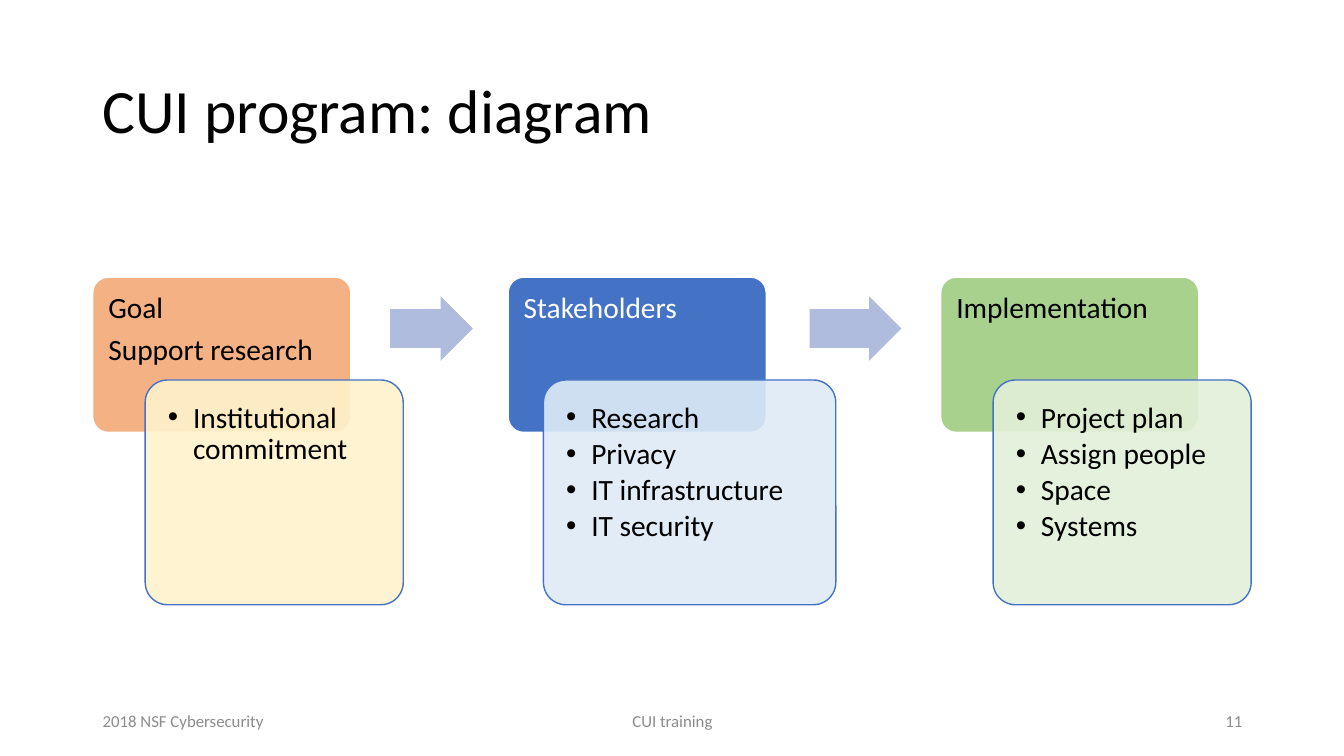
from lxml import etree
from pptx import Presentation
from pptx import util as u
from pptx.dml.color import RGBColor
from pptx.enum import shapes, text
from pptx.oxml.ns import qn

INK = {
    "black": "000000", "white": "FFFFFF", "gray": "8C8C8C",
    "blue": "4472C4", "arrow": "B0BCDE",
    "orange": "F4B183", "cream": "FFF2CC", "sky": "DEEBF7",
    "green": "A9D18E", "mint": "E2F0D9",
}
FONT = "Calibri"
SHAPE = shapes.MSO_SHAPE
ALIGN = text.PP_ALIGN
ANCHOR = text.MSO_ANCHOR

TOP = 2.75
STAGES = [
    (0.92, 2.56, 0.52, 2.56, "orange", "black", "cream",
     ["Goal", "Support research"], ["Institutional commitment"]),
    (5.04, 2.56, 0.35, 2.9, "blue", "white", "sky",
     ["Stakeholders"],
     ["Research", "Privacy", "IT infrastructure", "IT security"]),
    (9.33, 2.56, 0.52, 2.56, "green", "black", "mint",
     ["Implementation"],
     ["Project plan", "Assign people", "Space", "Systems"]),
]
ARROWS = [(3.87, 0.82), (8.03, 0.91)]
FOOT = [
    (0.92, 3, "2018 NSF Cybersecurity", ALIGN.LEFT),
    (4.42, 4.5, "CUI training", ALIGN.CENTER),
    (9.42, 3, "11", ALIGN.RIGHT),
]


def color(name):
    return RGBColor.from_string(INK[name])


def inches(box):
    return [u.Inches(v) for v in box]


def write(frame, lines, size, ink, align=ALIGN.LEFT, anchor=ANCHOR.TOP,
          inset=(0.1, 0.05), spacing=None, after=0):
    frame.word_wrap = True
    frame.vertical_anchor = anchor
    frame.margin_left = frame.margin_right = u.Inches(inset[0])
    frame.margin_top = frame.margin_bottom = u.Inches(inset[1])
    for i, line in enumerate(lines):
        para = frame.paragraphs[0] if i == 0 else frame.add_paragraph()
        para.text = line
        para.alignment = align
        para.line_spacing = spacing
        para.space_after = u.Pt(after)
        para.font.size = u.Pt(size)
        para.font.name = FONT
        para.font.color.rgb = color(ink)


def label(slide, box, *args, **style):
    write(slide.shapes.add_textbox(*inches(box)).text_frame, *args, **style)


def solid(slide, kind, box, fill, line=None):
    shape = slide.shapes.add_shape(kind, *inches(box))
    shape.shadow.inherit = False
    shape.fill.solid()
    shape.fill.fore_color.rgb = color(fill)
    if line:
        shape.line.color.rgb = color(line)
        shape.line.width = u.Pt(1)
    else:
        shape.line.fill.background()
    return shape


def panel(slide, box, fill, line):
    shape = solid(slide, SHAPE.ROUNDED_RECTANGLE, box, fill, line)
    shape.adjustments[0] = 0.1
    return shape


def fade(shape, percent):
    tint = shape.fill._xPr.find(qn("a:solidFill"))[0]
    etree.SubElement(tint, qn("a:alpha")).set("val", str(percent * 1000))


def bullet(para):
    props = para._p.get_or_add_pPr()
    indent = u.Inches(0.25)
    props.set("marL", str(indent))
    props.set("indent", str(-indent))
    etree.SubElement(props, qn("a:buFont")).set("typeface", "Arial")
    mark = etree.SubElement(props, qn("a:buChar"))
    mark.set("char", "•")
    props.append(props.find(qn("a:defRPr")))


def stage(slide, box, shift, wide, fill, ink, tint, heads, items):
    left, top, width, height = box
    head = panel(slide, box, fill, "white")
    write(head.text_frame, heads, 21, ink, inset=(0.11, 0.11),
          spacing=0.9, after=7.35)
    card = panel(slide, (left + shift, top + 1.02, wide, 2.23), tint, "blue")
    fade(card, 90)
    write(card.text_frame, items, 21, "black", inset=(0.16, 0.16),
          spacing=0.9, after=3.15)
    for para in card.text_frame.paragraphs:
        bullet(para)


def arrow(slide, box):
    shape = solid(slide, SHAPE.RIGHT_ARROW, box, "arrow")
    shape.adjustments[0] = 0.6
    shape.adjustments[1] = 0.5


def diagram(slide, top):
    for left, width, *rest in STAGES:
        stage(slide, (left, top, width, 1.54), *rest)
    for left, width in ARROWS:
        arrow(slide, (left, top + 0.19, width, 0.64))


def footer(slide, top, height):
    for left, width, words, align in FOOT:
        label(slide, (left, top, width, height), [words], 12, "gray",
              align=align, anchor=ANCHOR.MIDDLE)


def main():
    deck = Presentation()
    deck.slide_width = u.Inches(13.33)
    deck.slide_height = u.Inches(7.5)
    slide = deck.slides.add_slide(deck.slide_layouts[6])
    label(slide, (0.92, 0.4, 11.5, 1.45), ["CUI program: diagram"], 44,
          "black", anchor=ANCHOR.MIDDLE, spacing=0.9)
    diagram(slide, TOP)
    footer(slide, 6.95, 0.4)
    deck.save("out.pptx")


if __name__ == "__main__":
    main()
